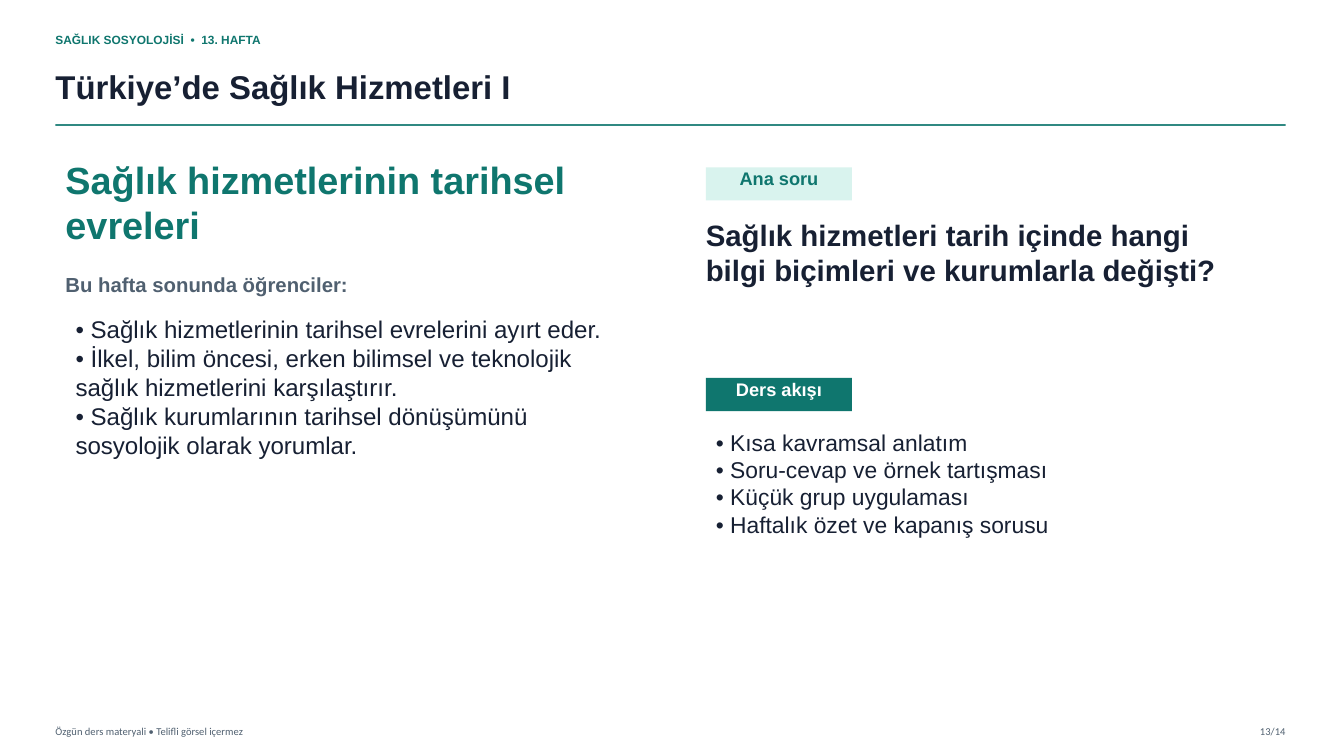
"""Build the opening slide of week 13 on the history of health services."""
import pptx
import pptx.util
import pptx.dml.color
import pptx.enum.shapes
import pptx.enum.text
from lxml import etree
from pptx.oxml.ns import qn

Inches = pptx.util.Inches
Align = pptx.enum.text.PP_ALIGN
Anchor = pptx.enum.text.MSO_ANCHOR
COLORS = {
    "teal": "0F766E",
    "mint": "D9F3EE",
    "navy": "172033",
    "slate": "506070",
    "white": "FFFFFF",
}
LEFT, RIGHT = 0.55, 12.75
COLUMN = 7


def rgb(name):
    """Return the named colour."""
    return pptx.dml.color.RGBColor.from_string(COLORS[name])


def write(shape, place, lines, size, color, bold=False, font="Arial",
          align=Align.LEFT, anchor=Anchor.TOP):
    """Place a shape and fill it with evenly formatted paragraphs."""
    shape.left, shape.top, shape.width, shape.height = map(Inches, place)
    frame = shape.text_frame
    frame.word_wrap = True
    frame.auto_size = pptx.enum.text.MSO_AUTO_SIZE.NONE
    frame.vertical_anchor = anchor
    frame.margin_left = frame.margin_right = 0
    frame.margin_top = frame.margin_bottom = 0
    frame.text = "\n".join(lines)
    for para in frame.paragraphs:
        para.alignment = align
        para.font.name = font
        para.font.size = pptx.util.Pt(size)
        para.font.bold = bold
        para.font.color.rgb = rgb(color)


deck = pptx.Presentation()
deck.slide_width, deck.slide_height = Inches(13.33), Inches(7.5)
page = deck.slides.add_slide(deck.slide_layouts[5])
page.background.fill.solid()
page.background.fill.fore_color.rgb = rgb("white")

write(page.shapes.title, (LEFT, 0.58, 11.95, 0.55), ["Türkiye’de Sağlık Hizmetleri I"],
      23.5, "navy", bold=True, anchor=Anchor.MIDDLE)

rule = page.shapes.add_connector(
    pptx.enum.shapes.MSO_CONNECTOR.STRAIGHT,
    Inches(LEFT), Inches(1.24), Inches(RIGHT), Inches(1.24))
rule.line.color.rgb = rgb("teal")
rule.line.width = pptx.util.Pt(1.2)
rule_properties = rule._element.spPr
rule_color = rule_properties.find(".//" + qn("a:srgbClr"))
etree.SubElement(rule_color, qn("a:alpha"), val="85000")
etree.SubElement(rule_properties, qn("a:effectLst"))

middle = {"anchor": Anchor.MIDDLE}
footer = {"font": "Calibri", **middle}
texts = [
    ((LEFT, 0.25, 3.6, 0.28), ["SAĞLIK SOSYOLOJİSİ  •  13. HAFTA"],
     8.5, "teal", {"bold": True, **middle}),
    ((LEFT, 7.14, 6, 0.22), ["Özgün ders materyali • Telifli görsel içermez"],
     7.5, "slate", footer),
    ((RIGHT - 0.65, 7.14, 0.65, 0.22), ["13/14"],
     7.5, "slate", {"align": Align.RIGHT, **footer}),
    ((0.65, 1.55, 5.3, 0.95), ["Sağlık hizmetlerinin tarihsel evreleri"],
     27, "teal", {"bold": True}),
    ((0.65, 2.7, 4.9, 0.3), ["Bu hafta sonunda öğrenciler:"],
     14.5, "slate", {"bold": True}),
    ((0.75, 3.12, 5.5, 2),
     ["• Sağlık hizmetlerinin tarihsel evrelerini ayırt eder.",
      "• İlkel, bilim öncesi, erken bilimsel ve teknolojik sağlık hizmetlerini karşılaştırır.",
      "• Sağlık kurumlarının tarihsel dönüşümünü sosyolojik olarak yorumlar."],
     17.2, "navy", {}),
    ((COLUMN, 2.15, 5.35, 1.1),
     ["Sağlık hizmetleri tarih içinde hangi bilgi biçimleri ve kurumlarla değişti?"],
     21, "navy", {"bold": True}),
    ((COLUMN + 0.1, 4.25, 5.35, 1.55),
     ["• Kısa kavramsal anlatım",
      "• Soru-cevap ve örnek tartışması",
      "• Küçük grup uygulaması",
      "• Haftalık özet ve kapanış sorusu"],
     16.3, "navy", {}),
]
for place, lines, size, color, style in texts:
    box = page.shapes.add_textbox(*map(Inches, place))
    write(box, place, lines, size, color, **style)

tags = [(1.66, "Ana soru", "mint", "teal"), (3.75, "Ders akışı", "teal", "white")]
for top, label, fill, color in tags:
    place = (COLUMN, top, 1.45, 0.33)
    tag = page.shapes.add_shape(
        pptx.enum.shapes.MSO_SHAPE.RECTANGLE, *map(Inches, place))
    tag.shadow.inherit = False
    tag.fill.solid()
    tag.fill.fore_color.rgb = rgb(fill)
    tag.line.fill.background()
    write(tag, place, [label], 13, color, bold=True, align=Align.CENTER)

deck.save("out.pptx")
